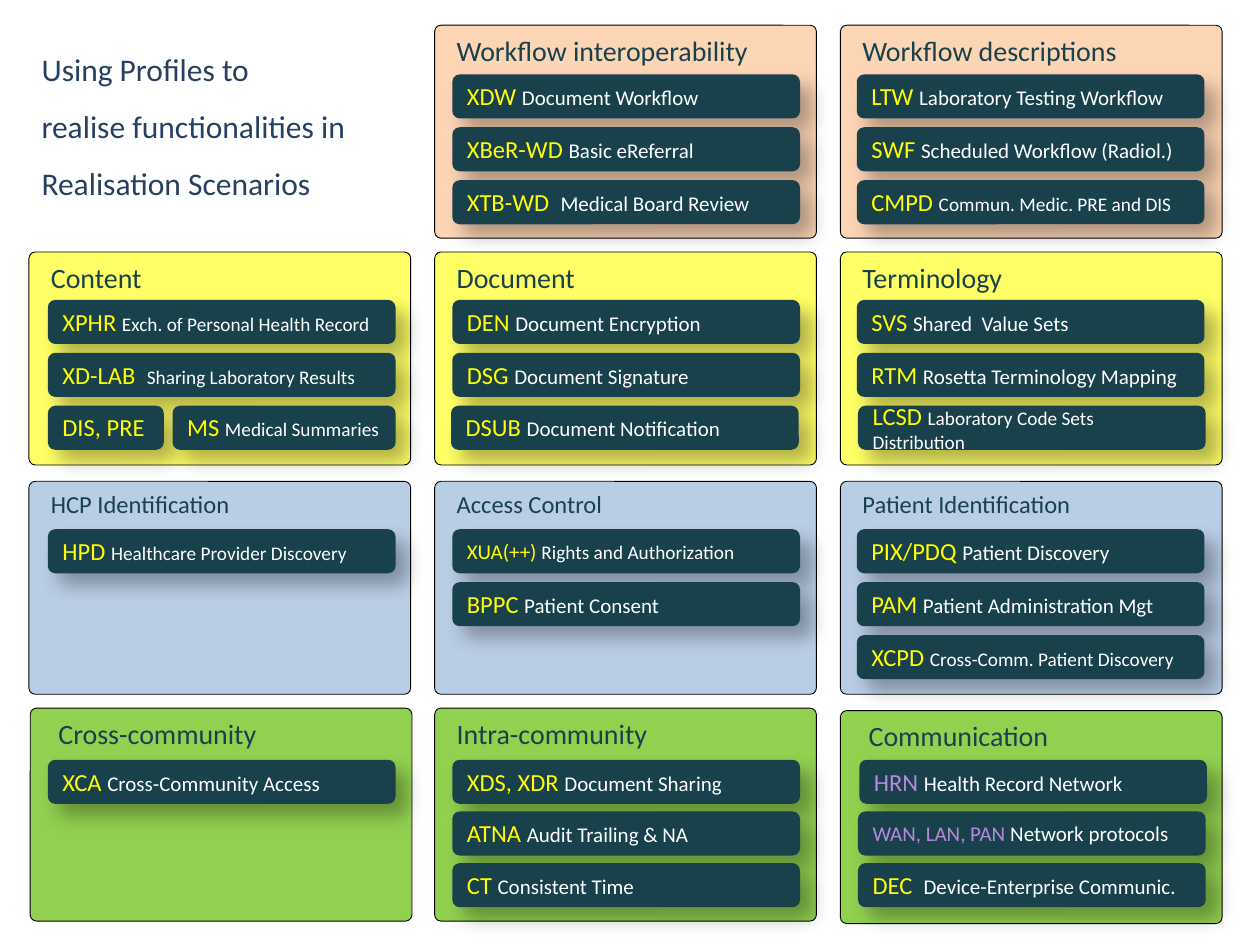
from lxml import etree
from pptx import Presentation
from pptx.dml.color import RGBColor
from pptx.enum.shapes import MSO_SHAPE
from pptx.enum.text import MSO_ANCHOR, MSO_AUTO_SIZE, PP_ALIGN
from pptx.oxml.ns import qn
from pptx.util import Inches, Pt

ROUNDED = MSO_SHAPE.ROUNDED_RECTANGLE
TOP, MIDDLE = MSO_ANCHOR.TOP, MSO_ANCHOR.MIDDLE
LEFT = PP_ALIGN.LEFT
NO_FIT = MSO_AUTO_SIZE.NONE

COLORS = {
    "orange": "FCD5B5", "yellow": "FFFF66", "blue": "B9CDE5", "green": "92D050",
    "teal": "18414C", "navy": "254061", "code": "FFFF00", "network": "B889DB",
    "white": "FFFFFF", "black": "000000",
}

ROW_COLORS = ["orange", "yellow", "blue", "green"]
ROW_TOPS = [0.2, 2.0, 3.82, 5.62]
PROFILE_TOPS = [0.59, 2.38, 4.2, 6.03]
PROFILE_STEPS = [0.42, 0.42, 0.42, 0.41]
HEADING_SIZES = [16, 16, 14, 16]

DOMAINS = [
    (1, 0, "Workflow interoperability", {}),
    (2, 0, "Workflow descriptions", {}),
    (0, 1, "Content", {}),
    (1, 1, "Document", {}),
    (2, 1, "Terminology", {}),
    (0, 2, "HCP Identification", {}),
    (1, 2, "Access Control", {}),
    (2, 2, "Patient Identification", {}),
    (0, 3, "Cross-community", {"dx": 0.01, "indent": 0.05}),
    (1, 3, "Intra-community", {}),
    (2, 3, "Communication", {"dy": 0.02, "indent": 0.05}),
]

PROFILES = [
    (1, 0, 0, "XDW ", "Document Workflow", {}),
    (1, 0, 1, "XBeR-WD ", "Basic eReferral", {}),
    (1, 0, 2, "XTB-WD  ", "Medical Board Review", {}),
    (2, 0, 0, "LTW ", "Laboratory Testing Workflow", {}),
    (2, 0, 1, "SWF ", "Scheduled Workflow (Radiol.)", {}),
    (2, 0, 2, "CMPD ", "Commun. Medic. PRE and DIS", {"size": 11}),
    (0, 1, 0, "XPHR ", "Exch. of Personal Health Record", {"size": 11}),
    (0, 1, 1, "XD-LAB  ", "Sharing Laboratory Results", {"size": 11}),
    (0, 1, 2, "DIS, PRE", "", {"width": 0.92}),
    (0, 1, 2, "MS ", "Medical Summaries", {"size": 11, "dx": 0.99, "width": 1.77}),
    (1, 1, 0, "DEN ", "Document Encryption", {}),
    (1, 1, 1, "DSG ", "Document Signature", {}),
    (1, 1, 2, "DSUB ", "Document Notification", {"dx": -0.01}),
    (2, 1, 0, "SVS ", "Shared  Value Sets", {}),
    (2, 1, 1, "RTM ", "Rosetta Terminology Mapping", {}),
    (2, 1, 2, "LCSD ", "Laboratory Code Sets Distribution", {"size": 11, "dx": 0.01}),
    (0, 2, 0, "HPD ", "Healthcare Provider Discovery", {"size": 11}),
    (1, 2, 0, "XUA(++) ", "Rights and Authorization", {"size": 11, "code_size": 12}),
    (1, 2, 1, "BPPC ", "Patient Consent", {}),
    (2, 2, 0, "PIX/PDQ ", "Patient Discovery", {}),
    (2, 2, 1, "PAM ", "Patient Administration Mgt", {}),
    (2, 2, 2, "XCPD ", "Cross-Comm. Patient Discovery", {"size": 11}),
    (0, 3, 0, "XCA ", "Cross-Community Access", {}),
    (1, 3, 0, "XDS, XDR ", "Document Sharing", {}),
    (1, 3, 1, "ATNA ", "Audit Trailing & NA", {}),
    (1, 3, 2, "CT ", "Consistent Time", {}),
    (2, 3, 0, "HRN ", "Health Record Network", {"color": "network", "dx": 0.02}),
    (2, 3, 1, "WAN, LAN, PAN ", "Network protocols",
     {"color": "network", "code_size": 12, "dx": 0.01}),
    (2, 3, 2, "DEC  ", "Device-Enterprise Communic.", {"dx": 0.01}),
]


class ProfileMap:
    font = "Calibri"
    column_left, column_step = 0.23, 3.22
    profile_left, profile_step = 0.38, 3.21

    def __init__(self, deck):
        self.page = deck.slides.add_slide(deck.slide_layouts[5])

    def color(self, name):
        return RGBColor.from_string(COLORS[name])

    def apply(self, target, **values):
        for name, value in values.items():
            setattr(target, name, value)

    def add_span(self, para, text, size, color):
        span = para.add_run()
        span.text = text
        self.apply(span.font, name=self.font, size=Pt(size))
        span.font.color.rgb = self.color(color)

    def title(self, lines):
        box = self.page.shapes.title
        self.apply(box, left=Inches(0.23), top=Inches(0.2),
                   width=Inches(2.81), height=Inches(1.42))
        frame = box.text_frame
        self.apply(frame, word_wrap=True, vertical_anchor=TOP, auto_size=NO_FIT)
        for index, line in enumerate(lines):
            para = frame.add_paragraph() if index else frame.paragraphs[0]
            self.apply(para, alignment=LEFT, line_spacing=1.5, space_before=Pt(0))
            self.add_span(para, line, 18, "navy")

    def block(self, left, top, width, height, fill, anchor, insets):
        box = self.page.shapes.add_shape(
            ROUNDED, *map(Inches, (left, top, width, height)))
        box.shadow.inherit = False
        box.fill.solid()
        box.fill.fore_color.rgb = self.color(fill)
        frame = box.text_frame
        sides = ("margin_left", "margin_top", "margin_right", "margin_bottom")
        self.apply(frame, word_wrap=True, vertical_anchor=anchor,
                   **dict(zip(sides, map(Inches, insets))))
        frame.paragraphs[0].alignment = LEFT
        return box

    def domain(self, column, row, heading, dx=0, dy=0, indent=0):
        left = self.column_left + column * self.column_step + dx
        box = self.block(left, ROW_TOPS[row] + dy, 3.03, 1.69, ROW_COLORS[row],
                         TOP, (0.16 + indent, 0.05, 0.1, 0.05))
        box.adjustments[0] = 0.03
        box.line.color.rgb = self.color("black")
        box.line.width = Pt(0.5)
        self.add_span(box.text_frame.paragraphs[0], heading, HEADING_SIZES[row], "teal")

    def profile(self, column, row, place, code, meaning, size=12, code_size=14,
                color="code", dx=0, width=2.76):
        left = self.profile_left + column * self.profile_step + dx
        top = PROFILE_TOPS[row] + place * PROFILE_STEPS[row]
        box = self.block(left, top, width, 0.35, "teal", MIDDLE, (0.1, 0.04, 0.1, 0.05))
        box.line.fill.background()
        self.cast_shadow(box)
        para = box.text_frame.paragraphs[0]
        self.add_span(para, code, code_size, color)
        if meaning:
            self.add_span(para, meaning, size, "white")

    def cast_shadow(self, box):
        effects = box._element.spPr.find(qn("a:effectLst"))
        shadow = etree.SubElement(
            effects, qn("a:outerShdw"), blurRad=str(Pt(11)), dist=str(Pt(9)),
            dir=str(45 * 60000), algn="tl", rotWithShape="0")
        tint = etree.SubElement(shadow, qn("a:srgbClr"), val=COLORS["black"])
        etree.SubElement(tint, qn("a:alpha"), val="30000")


def main():
    deck = Presentation()
    deck.slide_width, deck.slide_height = Inches(10), Inches(7.5)
    profile_map = ProfileMap(deck)
    profile_map.title(["Using Profiles to",
                       "realise functionalities in Realisation Scenarios"])
    for *content, options in DOMAINS:
        profile_map.domain(*content, **options)
    for *content, options in PROFILES:
        profile_map.profile(*content, **options)
    deck.save("out.pptx")


if __name__ == "__main__":
    main()
